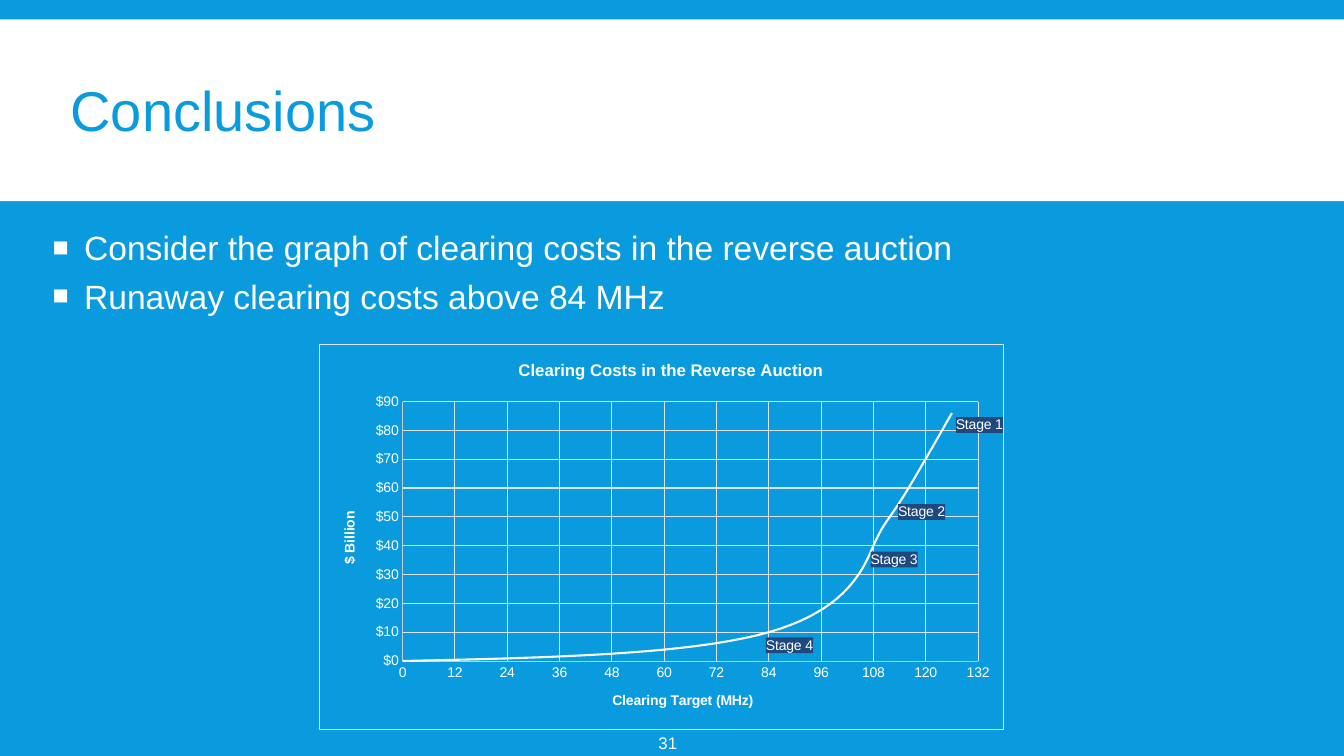
from pptx import Presentation
from pptx.chart.data import XyChartData
from pptx.dml.color import RGBColor
from pptx.enum.chart import XL_CHART_TYPE, XL_LABEL_POSITION, XL_TICK_MARK
from pptx.enum.shapes import MSO_SHAPE
from pptx.enum.text import MSO_ANCHOR, PP_ALIGN
from pptx.oxml import parse_xml
from pptx.oxml.ns import nsdecls, qn
from pptx.util import Cm, Pt

BLUE, WHITE, GRID, AXIS, NAVY = "099BDD", "FFFFFF", "DFDFDF", "CACACA", "1F497D"
FONT = "Arial"
STAGES = [  # clearing target, cost, label, label shift in percent
    (0, 0, None, None),
    (84, 10, "Stage 4", (-1, 3.4)),
    (108, 40, "Stage 3", (-1, 3.6)),
    (114, 55, "Stage 2", (-0.8, 2.5)),
    (126, 86, "Stage 1", (0, 3.1)),
]


def tint(code):
    return RGBColor.from_string(code)


def style(font, size, color=WHITE, bold=False):
    font.name, font.size, font.bold = FONT, Pt(size), bold
    font.color.rgb = tint(color)


def add_text(slide, box, lines, size, color=WHITE, anchor=MSO_ANCHOR.MIDDLE):
    frame = slide.shapes.add_textbox(*map(Cm, box)).text_frame
    frame.word_wrap, frame.vertical_anchor = True, anchor
    frame.text = "\n".join(lines)
    for para in frame.paragraphs:
        style(para.runs[0].font, size, color)
    return frame


def add_head(slide, box, text):
    left, top, width, height = box
    band = slide.shapes.add_shape(MSO_SHAPE.RECTANGLE, *map(Cm, box))
    band.shadow.inherit = False
    band.fill.solid()
    band.fill.fore_color.rgb = tint(WHITE)
    band.line.fill.background()
    spot = (left + 1.53, top + 0.3, width - 5.93, height - 0.39)
    add_text(slide, spot, [text], 40, BLUE).paragraphs[0].line_spacing = 0.85


def add_list(slide, box, lines):
    frame = add_text(slide, box, lines, 24, anchor=MSO_ANCHOR.TOP)
    for para in frame.paragraphs:
        para.space_before, para.space_after = Pt(2), Pt(4)
        props = para._p.get_or_add_pPr()
        props.set("marL", str(Cm(1.27)))
        props.set("indent", str(-Cm(0.79)))
        for part in (f'buClr {nsdecls("a")}><a:srgbClr val="{WHITE}"/></a:buClr>',
                     f'buSzPct {nsdecls("a")} val="80000"/>',
                     f'buFont {nsdecls("a")} typeface="{FONT}"/>',
                     f'buChar {nsdecls("a")} char="■"/>'):
            props.append(parse_xml("<a:" + part))


def paint(fill, line=None):
    """Shape properties for a chart part."""
    edge = ""
    if line:
        edge = (f'<a:ln w="{Pt(0.75)}"><a:solidFill><a:srgbClr val="{line}"/>'
                '</a:solidFill></a:ln>')
    return parse_xml(f'<c:spPr {nsdecls("c", "a")}><a:solidFill>'
                     f'<a:srgbClr val="{fill}"/></a:solidFill>{edge}</c:spPr>')


def layout(mode="", **vals):
    """Manual layout in percent of the chart."""
    modes = "".join(f'<c:{key}Mode val="edge"/>' for key in "xy") if mode else ""
    if mode == "inner":
        modes = '<c:layoutTarget val="inner"/>' + modes
    spots = "".join(f'<c:{key} val="{val / 100:.4f}"/>'
                    for key, val in vals.items())
    return parse_xml(f'<c:layout {nsdecls("c")}><c:manualLayout>{modes}{spots}'
                     '</c:manualLayout></c:layout>')


def set_title(title, text, size, x, y):
    title.text_frame.text = text
    style(title.text_frame.paragraphs[0].runs[0].font, size, bold=True)
    node = title._element
    for old in node.findall(qn("c:layout")):
        node.remove(old)
    node.find(qn("c:tx")).addnext(layout("edge", x=x, y=y))


def set_axis(axis, top, step, text, x, y):
    axis.minimum_scale, axis.maximum_scale, axis.major_unit = 0, top, step
    axis.major_tick_mark = axis.minor_tick_mark = XL_TICK_MARK.NONE
    axis.has_major_gridlines = True
    for line, color in ((axis.format.line, AXIS),
                        (axis.major_gridlines.format.line, GRID)):
        line.color.rgb, line.width = tint(color), Pt(0.75)
    style(axis.tick_labels.font, 10)
    set_title(axis.axis_title, text, 10, x, y)


def set_label(point, text, shift):
    label = point.data_label
    label.text_frame.text = text
    style(label.text_frame.paragraphs[0].runs[0].font, 10)
    label.position = XL_LABEL_POSITION.RIGHT
    node = label._dLbl
    node.find(qn("c:tx")).addnext(paint(NAVY))
    node.find(qn("c:idx")).addnext(layout(x=shift[0], y=shift[1]))


def add_graph(slide, box):
    data = XyChartData()
    costs = data.add_series("Series 1")
    for target, cost, *_ in STAGES:
        costs.add_data_point(target, cost)
    chart = slide.shapes.add_chart(
        XL_CHART_TYPE.XY_SCATTER_SMOOTH_NO_MARKERS, *map(Cm, box), data).chart
    chart.has_legend = False
    style(chart.font, 10)

    # Titles and axes
    chart.has_title = True
    set_title(chart.chart_title, "Clearing Costs in the Reverse Auction",
              12, 28.6, 3.2)
    set_axis(chart.category_axis, 132, 12, "Clearing Target (MHz)", 42.4, 89.4)
    set_axis(chart.value_axis, 90, 10, "$ Billion", 2.6, 42.7)
    ticks = chart.value_axis.tick_labels
    ticks.number_format, ticks.number_format_is_linked = '"$"0', False

    # Curve and stage labels
    plot = chart.plots[0]
    plot.vary_by_categories = False
    curve = plot.series[0]
    curve.format.line.color.rgb, curve.format.line.width = tint(WHITE), Pt(1.5)
    for i, (_, _, text, shift) in enumerate(STAGES):
        if text:
            set_label(curve.points[i], text, shift)
    node = curve._element
    for old in node.findall(qn("c:smooth")):
        node.remove(old)
    node.find(qn("c:yVal")).addnext(
        parse_xml(f'<c:smooth {nsdecls("c")} val="1"/>'))

    # Frame and plot area
    space = chart._chartSpace
    body = space.find(qn("c:chart"))
    body.addprevious(parse_xml(f'<c:roundedCorners {nsdecls("c")} val="0"/>'))
    body.addnext(paint(BLUE, GRID))
    area = body.find(qn("c:plotArea"))
    for old in area.findall(qn("c:layout")):
        area.remove(old)
    area.insert(0, layout("inner", x=12.1, y=14.8, w=84.2, h=67.4))
    area.append(paint(BLUE))


def add_number(slide, box, text):
    frame = add_text(slide, box, [text], 12)
    frame.margin_left = Cm(0.13)
    frame.paragraphs[0].alignment = PP_ALIGN.CENTER


def main():
    deck = Presentation()
    deck.slide_width, deck.slide_height = Cm(33.87), Cm(19.05)
    slide = deck.slides.add_slide(deck.slide_layouts[6])
    slide.background.fill.solid()
    slide.background.fill.fore_color.rgb = tint(BLUE)
    add_head(slide, (0, 0.49, 33.87, 4.58), "Conclusions")
    add_list(slide, (0.6, 5.59, 31.27, 11.68),
             ["Consider the graph of clearing costs in the reverse auction",
              "Runaway clearing costs above 84 MHz"])
    add_number(slide, (15.62, 18.21, 2.54, 1.02), "31")
    add_graph(slide, (8.05, 8.67, 17.25, 9.73))
    deck.save("out.pptx")


if __name__ == "__main__":
    main()
